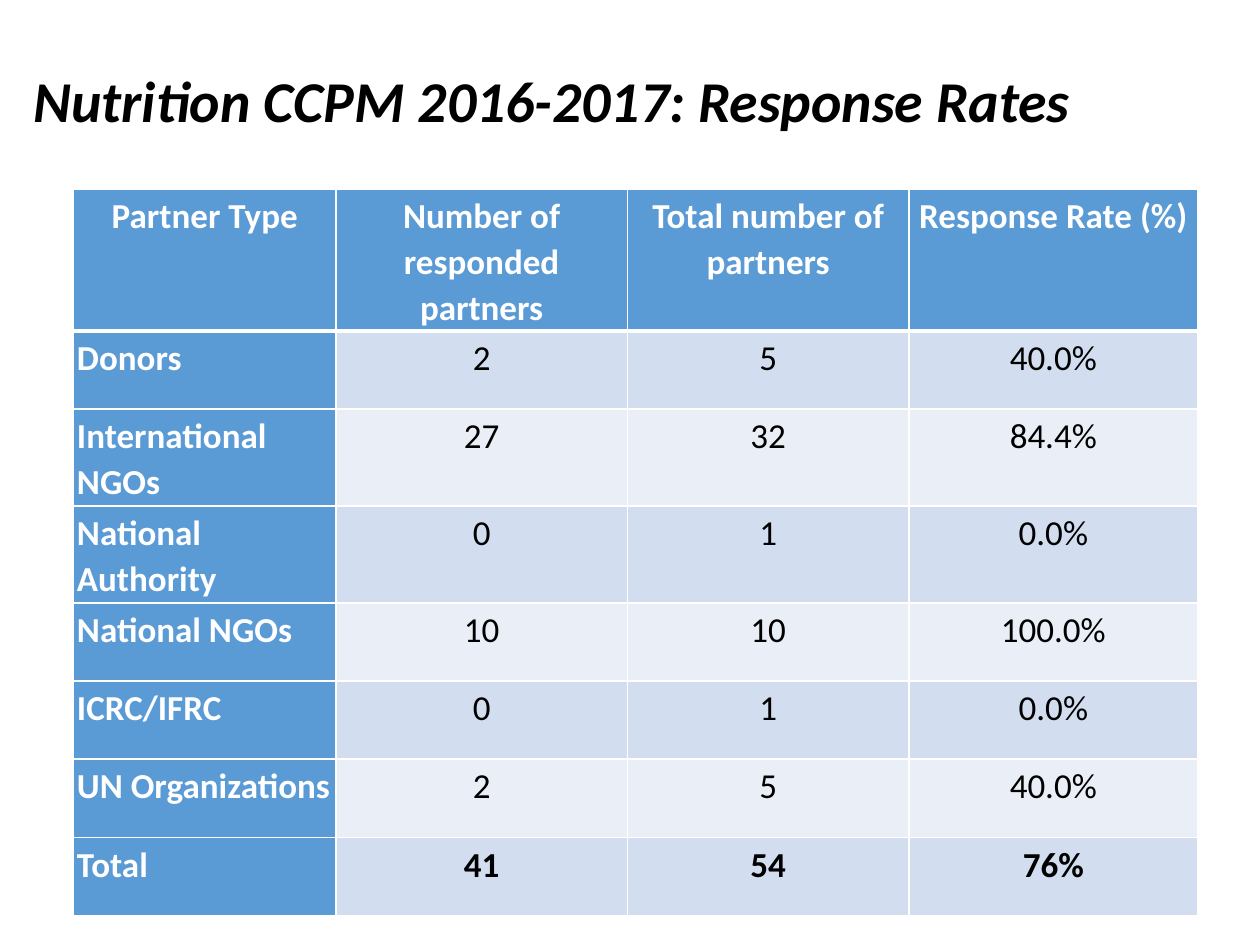
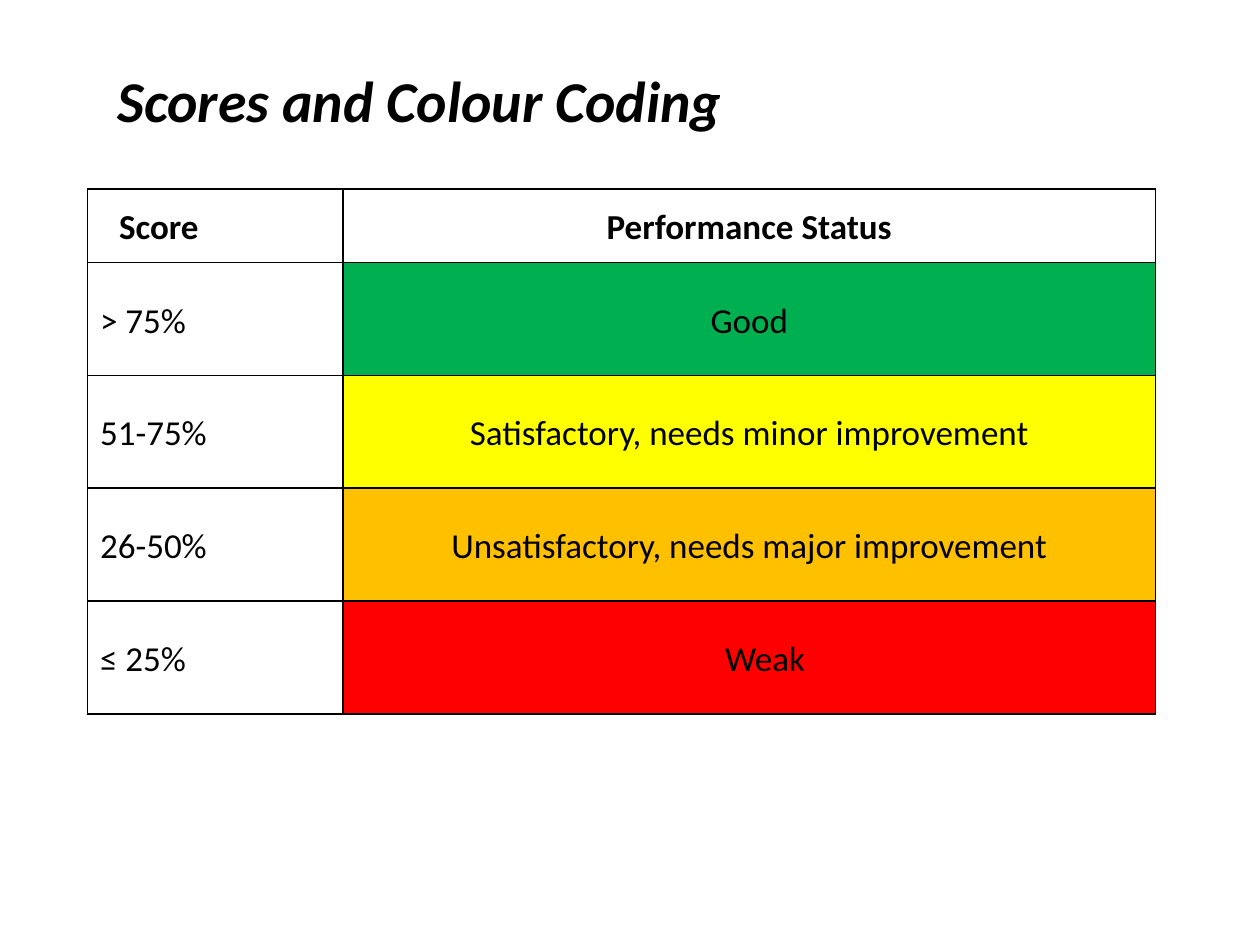
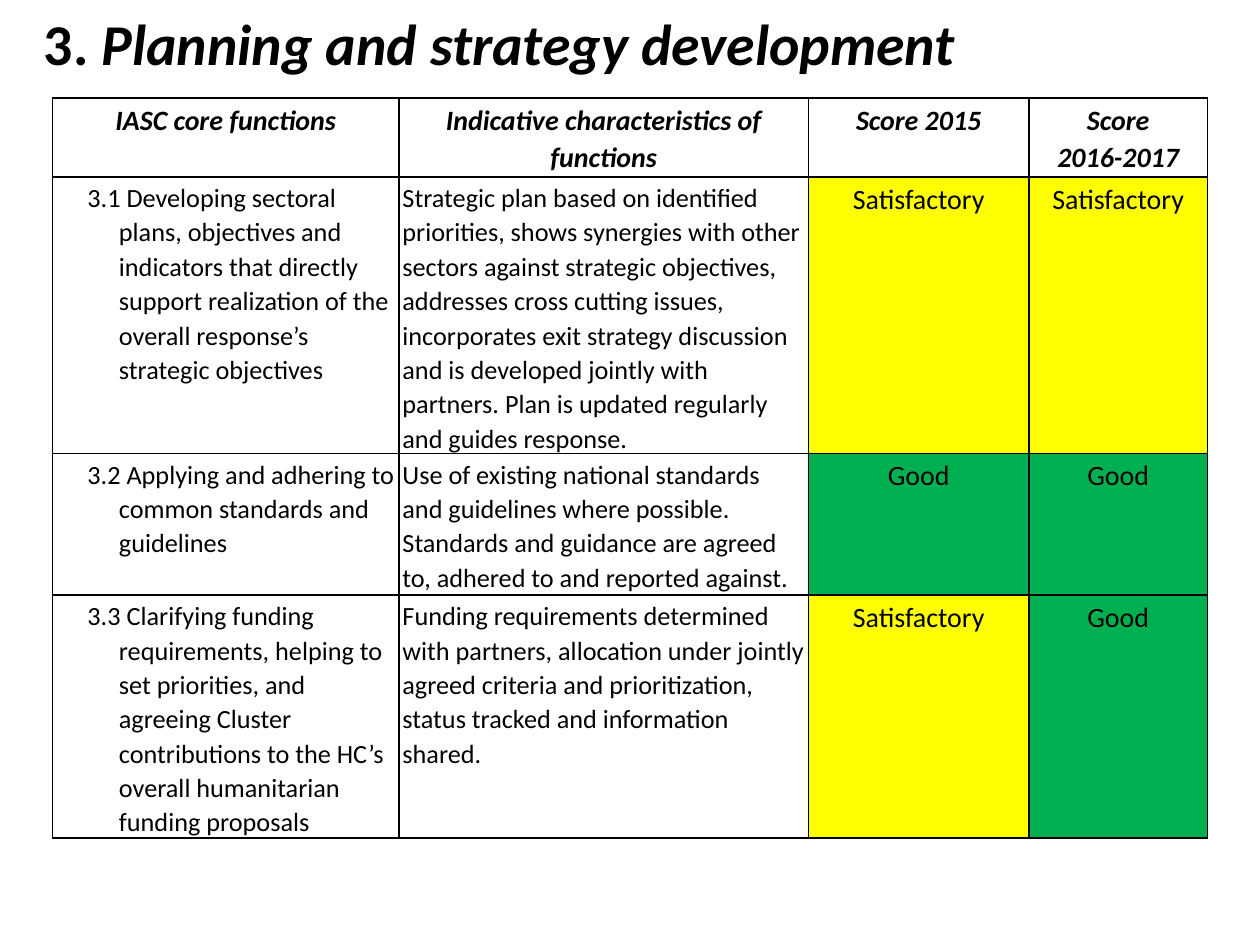
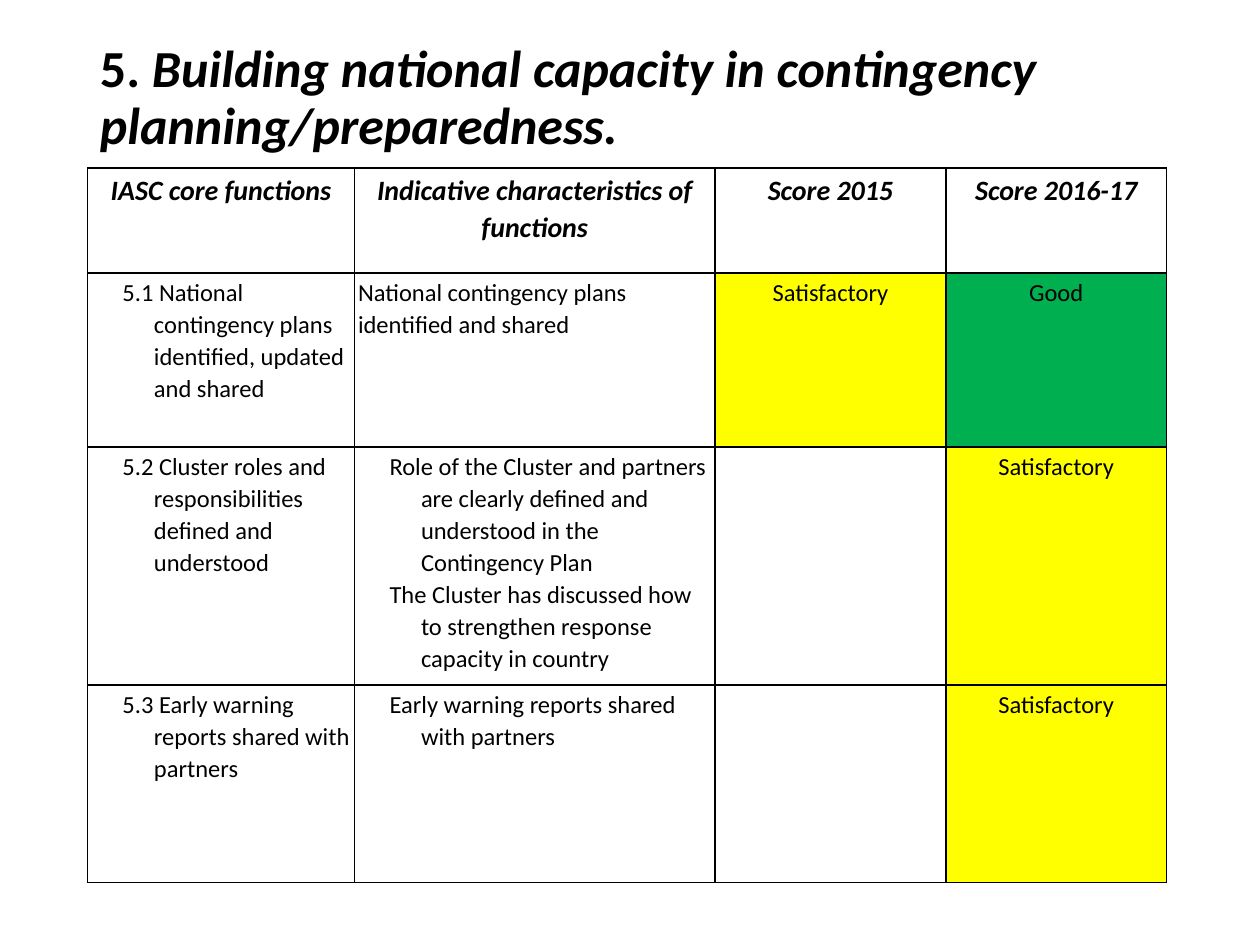
import pptx
import pptx.dml.color
import pptx.enum.text
import pptx.oxml
import pptx.util
from pptx.oxml.ns import qn

Pt = pptx.util.Pt
RGBColor = pptx.dml.color.RGBColor
Align = pptx.enum.text.PP_ALIGN
Anchor = pptx.enum.text.MSO_ANCHOR

FONT = "Calibri"
BLACK = RGBColor(0, 0, 0)
WHITE = RGBColor(0xFF, 0xFF, 0xFF)
BLUE = RGBColor(0x5B, 0x9B, 0xD5)
BANDS = [RGBColor(0xD2, 0xDE, 0xEF), RGBColor(0xEA, 0xEF, 0xF7)]
GREEN = RGBColor(0, 0xB0, 0x50)
YELLOW = RGBColor(0xFF, 0xFF, 0)
AMBER = RGBColor(0xFF, 0xC0, 0)
RED = RGBColor(0xFF, 0, 0)
STATUS = {"Good": GREEN, "Satisfactory": YELLOW}

RATES = [
    ("Partner Type", "Number of responded partners",
     "Total number of partners", "Response Rate (%)"),
    ("Donors", "2", "5", "40.0%"),
    ("International NGOs", "27", "32", "84.4%"),
    ("National Authority", "0", "1", "0.0%"),
    ("National NGOs", "10", "10", "100.0%"),
    ("ICRC/IFRC", "0", "1", "0.0%"),
    ("UN Organizations", "2", "5", "40.0%"),
    ("Total", "41", "54", "76%"),
]
LEVELS = [
    ("Score", "Performance Status", None),
    ("> 75%", "Good", GREEN),
    ("51-75%", "Satisfactory, needs minor improvement", YELLOW),
    ("26-50%", "Unsatisfactory, needs major improvement", AMBER),
    ("≤ 25%", "Weak", RED),
]
HEADS = ("IASC core functions", "Indicative characteristics of functions",
         "Score 2015")
PLANS = [
    (*HEADS, "Score\n2016-2017"),
    ("3.1 Developing sectoral plans, objectives and indicators that directly "
     "support realization of the overall response’s strategic objectives",
     "Strategic plan based on identified priorities, shows synergies with "
     "other sectors against strategic objectives, addresses cross cutting "
     "issues, incorporates exit strategy discussion and is developed jointly "
     "with partners. Plan is updated regularly and guides response.",
     "Satisfactory", "Satisfactory"),
    ("3.2 Applying and adhering to common standards and guidelines",
     "Use of existing national standards and guidelines where possible. "
     "Standards and guidance are agreed to, adhered to and reported against.",
     "Good", "Good"),
    ("3.3 Clarifying funding requirements, helping to set priorities, and "
     "agreeing Cluster contributions to the HC’s overall humanitarian "
     "funding proposals",
     "Funding requirements determined with partners, allocation under jointly "
     "agreed criteria and prioritization, status tracked and information "
     "shared.",
     "Satisfactory", "Good"),
]
SKILLS = [
    (*HEADS, "Score 2016-17"),
    ("5.1 National contingency plans identified, updated and shared",
     "National contingency plans identified and shared",
     "Satisfactory", "Good"),
    ("5.2 Cluster roles and responsibilities defined and understood",
     "Role of the Cluster and partners are clearly defined and understood in "
     "the Contingency Plan\nThe Cluster has discussed how to strengthen "
     "response capacity in country",
     "", "Satisfactory"),
    ("5.3 Early warning reports shared with partners",
     "Early warning reports shared with partners",
     "", "Satisfactory"),
]


def style(run, size, color=BLACK, bold=False, italic=False):
    font = run.font
    font.name, font.size = FONT, Pt(size)
    font.bold, font.italic = bold, italic
    font.color.rgb = color


def add_title(slide, box, text, size=33, number=""):
    """Add a bold italic title, led by an upright number if one is given."""
    frame = slide.shapes.add_textbox(*map(Pt, box)).text_frame
    frame.word_wrap = True
    frame.vertical_anchor = Anchor.MIDDLE
    para = frame.paragraphs[0]
    para.line_spacing = 0.9
    for part, italic in ((number, False), (text, True)):
        if part:
            run = para.add_run()
            run.text = part
            style(run, size, bold=True, italic=italic)


def add_grid(slide, left, top, widths, heights):
    frame = slide.shapes.add_table(
        len(heights), len(widths), Pt(left), Pt(top),
        Pt(sum(widths)), Pt(sum(heights)))
    table = frame.table
    table.first_row = table.horz_banding = False
    for col, width in zip(table.columns, widths):
        col.width = Pt(width)
    for row, height in zip(table.rows, heights):
        row.height = Pt(height)
    return table


def set_edges(cell, color, **wide):
    """Rule all four sides at 1 pt; wide gives other widths by side."""
    props = cell._tc.get_or_add_tcPr()
    for place, side in enumerate("LRTB"):
        line = pptx.oxml.parse_xml(
            '<a:ln%s xmlns:a="http://schemas.openxmlformats.org/drawingml/'
            '2006/main" w="%d"><a:solidFill><a:srgbClr val="%s"/>'
            '</a:solidFill></a:ln%s>'
            % (side, Pt(wide.get(side, 1)), color, side))
        props.insert(place, line)


def set_inset(cell, gap):
    cell.margin_left = cell.margin_right = Pt(gap)
    cell.margin_top = cell.margin_bottom = Pt(gap)


def fill_cell(cell, text, size, fill=None, align=Align.LEFT, indent=(0, 0),
              spacing=1.07, after=0, **look):
    """Write a cell; indent is the left margin and the first line's shift."""
    if fill is None:
        cell.fill.background()
    else:
        cell.fill.solid()
        cell.fill.fore_color.rgb = fill
    cell.text_frame.text = text
    for para in cell.text_frame.paragraphs:
        para.alignment = align
        para.line_spacing = spacing
        para.space_after = Pt(after)
        props = para._p.get_or_add_pPr()
        props.set("marL", str(Pt(indent[0])))
        props.set("indent", str(Pt(indent[1])))
        for run in para.runs:
            style(run, size, **look)


def add_rates(slide):
    table = add_grid(slide, 42, 108, (150, 166.5, 161, 165),
                     [64] + [44.7] * 7)
    last = len(RATES) - 1
    for r, row in enumerate(RATES):
        for c, text in enumerate(row):
            cell = table.cell(r, c)
            head = r == 0 or c == 0
            fill_cell(cell, text, 20,
                      fill=BLUE if head else BANDS[(r - 1) % 2],
                      align=Align.LEFT if c == 0 and r else Align.CENTER,
                      color=WHITE if head else BLACK,
                      bold=head or r == last)
            set_inset(cell, 2)
            set_edges(cell, WHITE, T=3 if r == 1 else 1, B=1 if r else 3)


def add_levels(slide):
    table = add_grid(slide, 50, 108, (146, 464.4), [42] + [64.5] * 4)
    for r, (score, status, fill) in enumerate(LEVELS):
        left, right = table.cell(r, 0), table.cell(r, 1)
        look = dict(size=20, bold=r == 0, spacing=1.1, after=8)
        fill_cell(left, score, indent=(0 if r else 18, 0), **look)
        fill_cell(right, status, fill=fill, align=Align.CENTER,
                  indent=(18 if fill == RED else 0, 0), **look)
        if r == 0:
            set_inset(left, 0)
        for cell in (left, right):
            cell.vertical_anchor = Anchor.MIDDLE
            set_edges(cell, BLACK)


def add_scores(slide, rows, left, top, widths, heights, size, mark, hung=()):
    """Add a review table; mark is the score size, hung the rows whose
    characteristics have a hanging indent."""
    table = add_grid(slide, left, top, widths, heights)
    for r, row in enumerate(rows):
        for c, text in enumerate(row):
            cell = table.cell(r, c)
            head = r == 0
            hang = not head and (c == 0 or c == 1 and r in hung)
            fill_cell(cell, text, 16 if head else mark if c > 1 else size,
                      fill=STATUS.get(text),
                      align=Align.CENTER if head or c > 1 else Align.LEFT,
                      indent=(36, -18) if hang else (0, 0),
                      bold=head, italic=head)
            set_inset(cell, 2)
            set_edges(cell, BLACK)


def main():
    deck = pptx.Presentation()
    deck.slide_width, deck.slide_height = Pt(720), Pt(540)
    rates, levels, plans, skills = (
        deck.slides.add_slide(deck.slide_layouts[6]) for _ in range(4))

    add_title(rates, (12, 30, 696, 59),
              "Nutrition CCPM 2016-2017: Response Rates")
    add_rates(rates)

    add_title(levels, (60, 30, 594, 59), "Scores and Colour Coding")
    add_levels(levels)

    add_title(plans, (18, 0, 684, 54), "Planning and strategy development",
              number="3. ")
    add_scores(plans, PLANS, 30, 56, (198, 234, 126, 102),
               (42, 120, 66, 96.5), size=15, mark=16)

    add_title(skills, (50, 29, 620.6, 55.4),
              "Building national capacity in contingency "
              "planning/preparedness.", size=29.7, number="5. ")
    add_scores(skills, SKILLS, 50, 96, (152.6, 206, 132, 126),
               (60, 99.4, 136, 113), size=14, mark=14, hung=(2, 3))

    deck.save("out.pptx")


if __name__ == "__main__":
    main()
